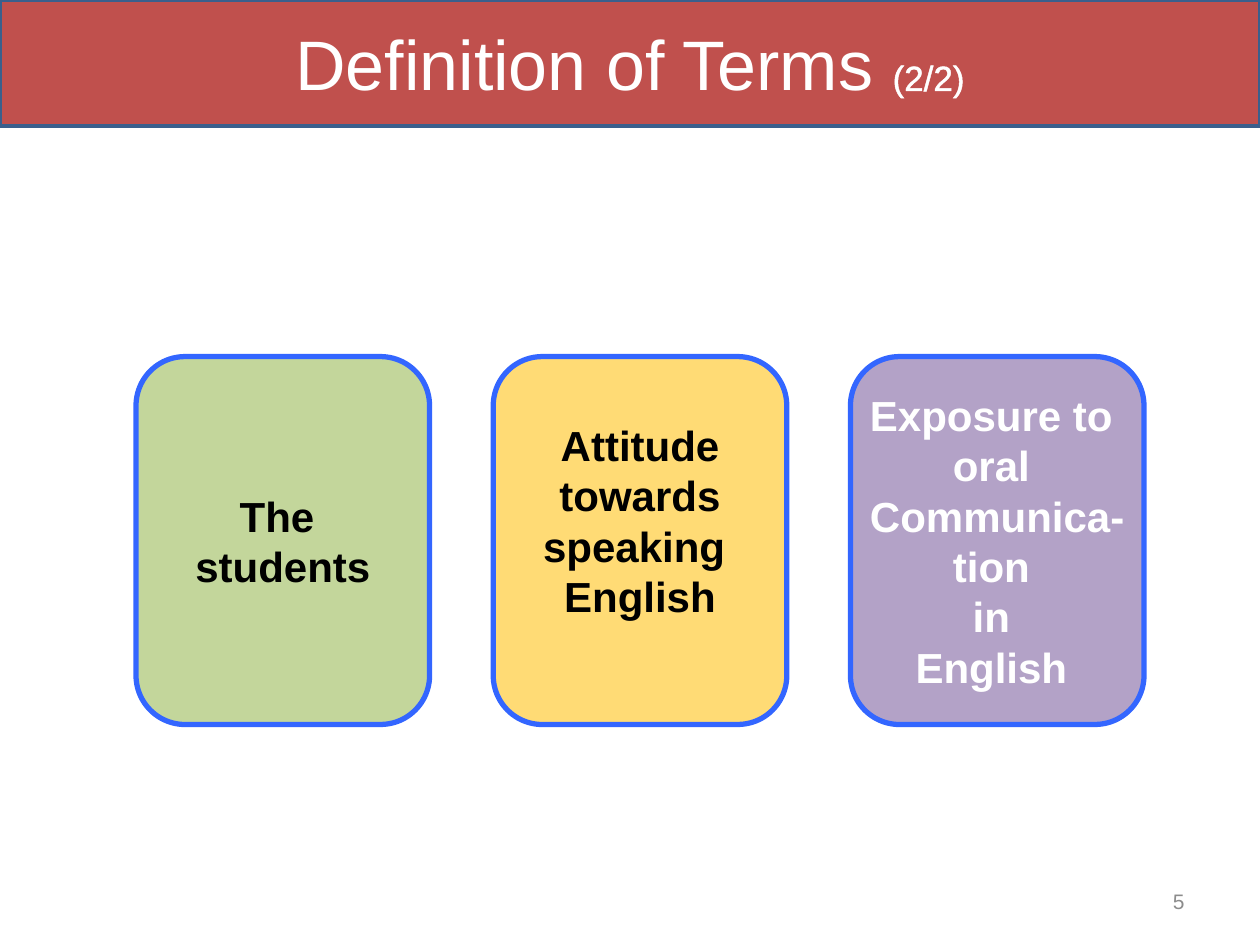
"""Build the second "Definition of Terms" slide with three term cards."""
from dataclasses import dataclass

from lxml.etree import SubElement
from pptx import Presentation
from pptx.dml.color import RGBColor
from pptx.enum.shapes import MSO_SHAPE
from pptx.enum.text import MSO_ANCHOR, MSO_AUTO_SIZE, PP_ALIGN
from pptx.oxml.ns import qn
from pptx.slide import Slide
from pptx.text.text import Font
from pptx.util import Inches, Pt

WHITE = RGBColor(0xFF, 0xFF, 0xFF)
BLACK = RGBColor(0x00, 0x00, 0x00)
GRAY = RGBColor(0x8C, 0x8C, 0x8C)
RED = RGBColor(0xC0, 0x50, 0x4D)
NAVY = RGBColor(0x3A, 0x5F, 0x8C)
BLUE = RGBColor(0x33, 0x66, 0xFF)
GREEN = RGBColor(0xC3, 0xD6, 0x9B)
YELLOW = RGBColor(0xFF, 0xDB, 0x75)
PURPLE = RGBColor(0xB3, 0xA2, 0xC7)

CARD_LEFT, CARD_TOP, CARD_PITCH = 1.08, 2.83, 2.835
CARD_WIDTH, CARD_HEIGHT = 2.33, 2.92


@dataclass
class Card:
    lines: list[str]
    fill: RGBColor
    text_color: RGBColor
    bottom_margin: float = 0.05


CARDS = [
    Card(["The ", "students"], GREEN, BLACK),
    Card(["Attitude", " towards ", "speaking ", "English"], YELLOW, BLACK, 0.37),
    Card(["Exposure to ", "oral ", "Communica-", "tion ", "in ", "English "], PURPLE, WHITE),
]


def style_font(font: Font, size: float, color: RGBColor, bold: bool = False) -> None:
    """Apply the slide's typeface with a size, colour and weight."""
    font.name = "Arial"
    font.size = Pt(size)
    font.bold = bold
    font.color.rgb = color


def paint(shape, fill: RGBColor, line: RGBColor, width: float) -> None:
    """Give a shape a solid fill and outline."""
    shape.fill.solid()
    shape.fill.fore_color.rgb = fill
    shape.line.color.rgb = line
    shape.line.width = Pt(width)


def add_title(slide: Slide) -> None:
    """Turn the title placeholder into the banner across the top."""
    title = slide.shapes.title
    title.left, title.top, title.width, title.height = 0, 0, Inches(10), Inches(1)
    paint(title, RED, NAVY, 2)
    frame = title.text_frame
    frame.auto_size = MSO_AUTO_SIZE.NONE
    frame.vertical_anchor = MSO_ANCHOR.MIDDLE
    para = frame.paragraphs[0]
    para.alignment = PP_ALIGN.CENTER
    for text, size in (("Definition of Terms ", 40), ("(2/2)", 20)):
        span = para.add_run()
        span.text = text
        style_font(span.font, size, WHITE)
    properties = span.font._element
    outline = SubElement(properties, qn("a:ln"), w=str(Pt(1.45)))
    color = SubElement(SubElement(outline, qn("a:solidFill")), qn("a:srgbClr"))
    color.set("val", str(WHITE))
    properties.insert(0, outline)


def add_card(slide: Slide, card: Card, left: float) -> None:
    """Draw one rounded card with its centred term."""
    box = slide.shapes.add_shape(
        MSO_SHAPE.ROUNDED_RECTANGLE,
        Inches(left), Inches(CARD_TOP), Inches(CARD_WIDTH), Inches(CARD_HEIGHT),
    )
    box.shadow.inherit = False
    box.adjustments[0] = 0.167
    paint(box, card.fill, BLUE, 3)
    frame = box.text_frame
    frame.text = "\n".join(card.lines)
    frame.word_wrap = False
    frame.vertical_anchor = MSO_ANCHOR.MIDDLE
    frame.margin_bottom = Inches(card.bottom_margin)
    for para in frame.paragraphs:
        para.alignment = PP_ALIGN.CENTER
        style_font(para.runs[0].font, 24, card.text_color, bold=True)


def add_page_number(slide: Slide, number: int) -> None:
    """Write the page number in the lower right corner."""
    box = slide.shapes.add_textbox(Inches(7.17), Inches(6.95), Inches(2.33), Inches(0.4))
    frame = box.text_frame
    frame.text = str(number)
    frame.word_wrap = True
    frame.vertical_anchor = MSO_ANCHOR.MIDDLE
    para = frame.paragraphs[0]
    para.alignment = PP_ALIGN.RIGHT
    style_font(para.runs[0].font, 12, GRAY)


def main() -> None:
    """Assemble and save the deck."""
    deck = Presentation()
    deck.slide_width, deck.slide_height = Inches(10), Inches(7.5)
    page = deck.slides.add_slide(deck.slide_layouts[5])
    add_title(page)
    for index, card in enumerate(CARDS):
        add_card(page, card, CARD_LEFT + index * CARD_PITCH)
    add_page_number(page, 5)
    deck.save("out.pptx")


if __name__ == "__main__":
    main()
